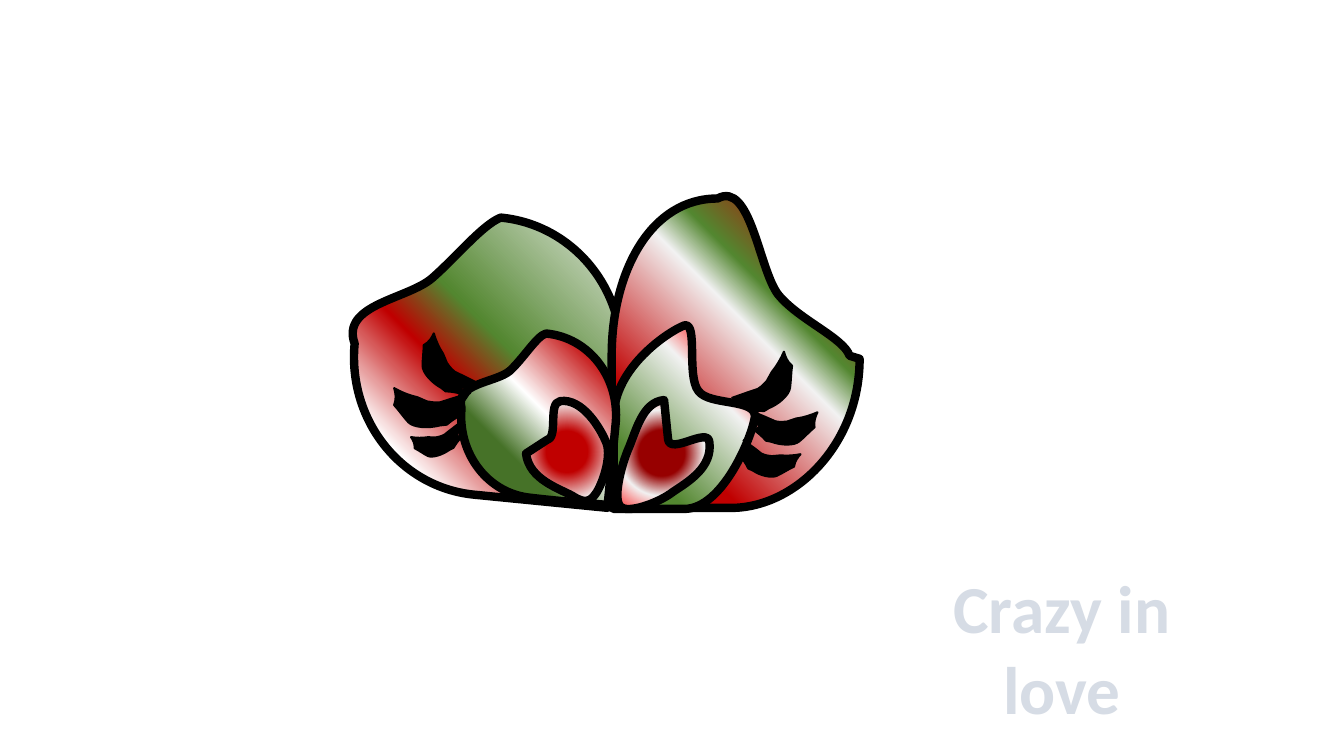
"""Builds a slide with a two-sided flower, its lashes and a caption."""
from dataclasses import dataclass
from math import cos, radians, sin

from pptx import Presentation
from pptx import util as u
from pptx.dml.color import RGBColor
from pptx.enum import text
from pptx.oxml import parse_xml
from pptx.oxml.ns import nsdecls, qn

UNIT = u.Cm(2.54) / 100
CURVE_STEPS = 12
CORNER, CENTRE = (100, 0, 0, 100), (50, 50, 50, 50)
FLOWER_ORIGIN = complex(345, 195)


@dataclass(frozen=True)
class Theme:
    """Colours and type sizes of the slide."""
    ink: str = "000000"
    white: str = "FFFFFF"
    pale: str = "F2F2F2"
    green: str = "538730"
    deep_green: str = "467228"
    red: str = "C00000"
    bright_red: str = "FF0000"
    dark_red: str = "970000"
    caption_stripe: str = "44546A"
    caption_ground: str = "D6DCE5"
    caption_edge: str = "333F50"
    font: str = "Calibri"
    caption_size: int = 48
    petal_line: float = 6
    lash_line: float = 1.5


T = Theme()

PETALS = [
    (95.5, CORNER, [(0, T.pale), (45, T.green), (59, T.red), (81, T.white), (96, T.white)],
     [(497, 216), (570, 223, 624, 290, 616, 366), (603, 504), (471, 491),
      (398, 484, 345, 417, 352, 341), (338, 302, 405, 297, 429, 276),
      (453, 255, 479, 223, 497, 216)]),
    (180, CORNER, [(9, T.red), (33, T.green), (43, T.pale), (77, T.red)],
     [(853, 356), (853, 440, 790, 504, 725, 504), (607, 504), (607, 353),
      (607, 269, 646, 197, 712, 197), (745, 179, 753, 267, 772, 292),
      (792, 317, 837, 335, 843, 353)]),
    (180, CORNER, [(12, T.bright_red), (33, T.pale), (78, T.green)],
     [(749, 414), (746, 434, 717, 505, 679, 505), (609, 505), (609, 414),
      (609, 364, 665, 328, 679, 323), (693, 319, 681, 373, 693, 388),
      (704, 403, 751, 395, 749, 414)]),
    (95.5, CORNER, [(15, T.red), (47, T.white), (69, T.deep_green)],
     [(542, 331), (585, 335, 615, 375, 611, 420), (603, 501),
      (577, 499, 552, 497, 527, 494), (484, 490, 454, 450, 458, 405),
      (451, 380, 492, 380, 506, 368), (520, 355, 533, 333, 542, 331)]),
    (354.4, CENTRE, [(29, T.dark_red), (55, T.pale), (100, T.bright_red)],
     [(623, 447), (631, 429, 637, 399, 659, 397), (663, 436),
      (665, 452, 703, 423, 704, 439), (707, 464, 683, 478, 668, 488),
      (654, 499, 623, 510, 616, 503), (608, 496, 616, 464, 623, 447)]),
    (262.7, CENTRE, [(14, T.red), (28, T.red), (69, T.pale)],
     [(568, 492), (556, 485, 525, 476, 522, 450), (542, 437),
      (555, 435, 543, 400, 556, 398), (578, 395, 596, 425, 602, 440),
      (607, 455, 597, 482, 591, 490), (585, 499, 579, 499, 568, 492)]),
]

LASH_SIZE = (60, 59)
LASH = [
    (0, 46), (17, 40), (26, 37), (31, 34, 33, 31, 35, 29), (40, 20),
    (45, 14, 49, 7, 52, 0), (53, 4, 55, 10, 60, 14), (59, 21, 59, 29, 58, 36),
    (57, 43, 47, 52, 37, 56), (32, 59), (16, 57, 17, 62, 17, 54),
]
LASH_PLACES = [
    (726, 349, 60, 59, 0, 1),
    (748, 388, 58, 55, 41.8, 1),
    (410, 411, 50, 40, 306.7, -1),
    (394, 366, 70, 59, 326.4, -1),
    (418, 334, 61, 55, 8.7, -1),
    (738, 424, 50, 51, 56.7, 1),
]


def turn(angle):
    """Return the complex factor that turns a point clockwise by degrees."""
    return complex(cos(radians(angle)), sin(radians(angle)))


def knots_of(steps, move):
    """Turn each step into complex points, moved by the given rule."""
    return [[move(complex(x, y)) * UNIT for x, y in zip(step[::2], step[1::2])]
            for step in steps]


def bounds(steps):
    """Return left, top, width and height of the line and curve steps."""
    reached = []
    for knots in steps:
        reached.append(knots[-1])
        if len(knots) == 3:
            pull, push, end = knots
            for i in range(1, CURVE_STEPS):
                t, s = i / CURVE_STEPS, 1 - i / CURVE_STEPS
                reached.append(s**3 * start + 3 * s * s * t * pull
                               + 3 * s * t * t * push + t**3 * end)
        start = knots[-1]
    across, down = [p.real for p in reached], [p.imag for p in reached]
    return min(across), min(down), max(across) - min(across), max(down) - min(down)


def add_outline(group, steps, pivot, angle, close, line_width):
    """Draw unturned steps given around a pivot, then turn them about that pivot."""
    corners = [(p.real, p.imag) for knots in steps for p in knots]
    builder = group.shapes.build_freeform(*corners[0])
    builder.add_line_segments(corners[1:], close=close)
    piece = builder.convert_to_shape()
    left, top, width, height = bounds(steps)
    track = next(piece._element.iter(qn("a:path")))
    track.set("w", str(round(width)))
    track.set("h", str(round(height)))
    for point, (x, y) in zip(track.iter(qn("a:pt")), corners):
        point.set("x", str(round(x - left)))
        point.set("y", str(round(y - top)))
    sides = iter(track.findall(qn("a:lnTo")))
    for knots in steps[1:]:
        first, *others = [next(sides) for _ in knots]
        if others:
            first.tag = qn("a:cubicBezTo")
        for other in others:
            first.append(other[0])
            track.remove(other)
    middle = pivot * UNIT + complex(left + width / 2, top + height / 2) * turn(angle)
    piece.left, piece.top = round(middle.real - width / 2), round(middle.imag - height / 2)
    piece.width, piece.height = round(width), round(height)
    piece.rotation = angle
    piece.shadow.inherit = False
    piece.line.color.rgb = RGBColor.from_string(T.ink)
    piece.line.width = u.Pt(line_width)
    return piece


def fill_radially(petal, focus, stops):
    """Fill a petal with a circular gradient that starts at the focus."""
    petal.fill.gradient()
    plain = petal._element.spPr.find(qn("a:gradFill"))
    marks = "".join(f'<a:gs pos="{pos * 1000}"><a:srgbClr val="{colour}"/></a:gs>'
                    for pos, colour in stops)
    sides = " ".join(f'{side}="{share * 1000}"' for side, share in zip("ltrb", focus))
    plain.getparent().replace(plain, parse_xml(
        f'<a:gradFill {nsdecls("a")} rotWithShape="1"><a:gsLst>{marks}</a:gsLst>'
        f'<a:path path="circle"><a:fillToRect {sides}/></a:path></a:gradFill>'))


def add_flower(slide, left, top):
    """Place the petals and lashes in one group from the given corner."""
    flower = slide.shapes.add_group_shape()
    shift = complex(left, top) / UNIT - FLOWER_ORIGIN
    for angle, focus, stops, steps in PETALS:
        unturned = knots_of(steps, lambda p: p * turn(-angle))
        petal = add_outline(flower, unturned, shift, angle, True, T.petal_line)
        fill_radially(petal, focus, stops)
    for x, y, width, height, angle, side in LASH_PLACES:
        across, down = width / LASH_SIZE[0], height / LASH_SIZE[1]
        curve = knots_of(LASH, lambda p: complex(
            side * (p.real * across - width / 2), p.imag * down - height / 2))
        pivot = shift + complex(x + width / 2, y + height / 2)
        lash = add_outline(flower, curve, pivot, angle, False, T.lash_line)
        lash.fill.solid()
        lash.fill.fore_color.rgb = RGBColor.from_string(T.ink)


def add_caption(slide, left, top, width, height):
    """Write the patterned caption into its box."""
    caption = slide.shapes.add_textbox(left, top, width, height)
    frame = caption.text_frame
    frame.text = "Crazy in love"
    frame.word_wrap = True
    frame.auto_size = text.MSO_AUTO_SIZE.SHAPE_TO_FIT_TEXT
    words = frame.paragraphs[0]
    words.alignment = text.PP_ALIGN.CENTER
    font = words.runs[0].font
    font.name, font.size, font.bold = T.font, u.Pt(T.caption_size), True
    look = words.runs[0]._r.get_or_add_rPr()
    look.insert(0, parse_xml(
        f'<a:ln {nsdecls("a")} w="{u.Pt(1)}"><a:solidFill>'
        f'<a:srgbClr val="{T.caption_edge}"/></a:solidFill></a:ln>'))
    look.insert(1, parse_xml(
        f'<a:pattFill {nsdecls("a")} prst="dkUpDiag">'
        f'<a:fgClr><a:srgbClr val="{T.caption_stripe}"/></a:fgClr>'
        f'<a:bgClr><a:srgbClr val="{T.caption_ground}"/></a:bgClr></a:pattFill>'))


def main():
    """Build the slide and save it."""
    deck = Presentation()
    deck.slide_width, deck.slide_height = u.Cm(33.87), u.Cm(19.05)
    slide = deck.slides.add_slide(deck.slide_layouts[6])
    add_caption(slide, u.Cm(23.6), u.Cm(14.15), u.Cm(6.32), u.Cm(5.13))
    add_flower(slide, u.Cm(8.76), u.Cm(4.95))
    deck.save("out.pptx")


if __name__ == "__main__":
    main()
